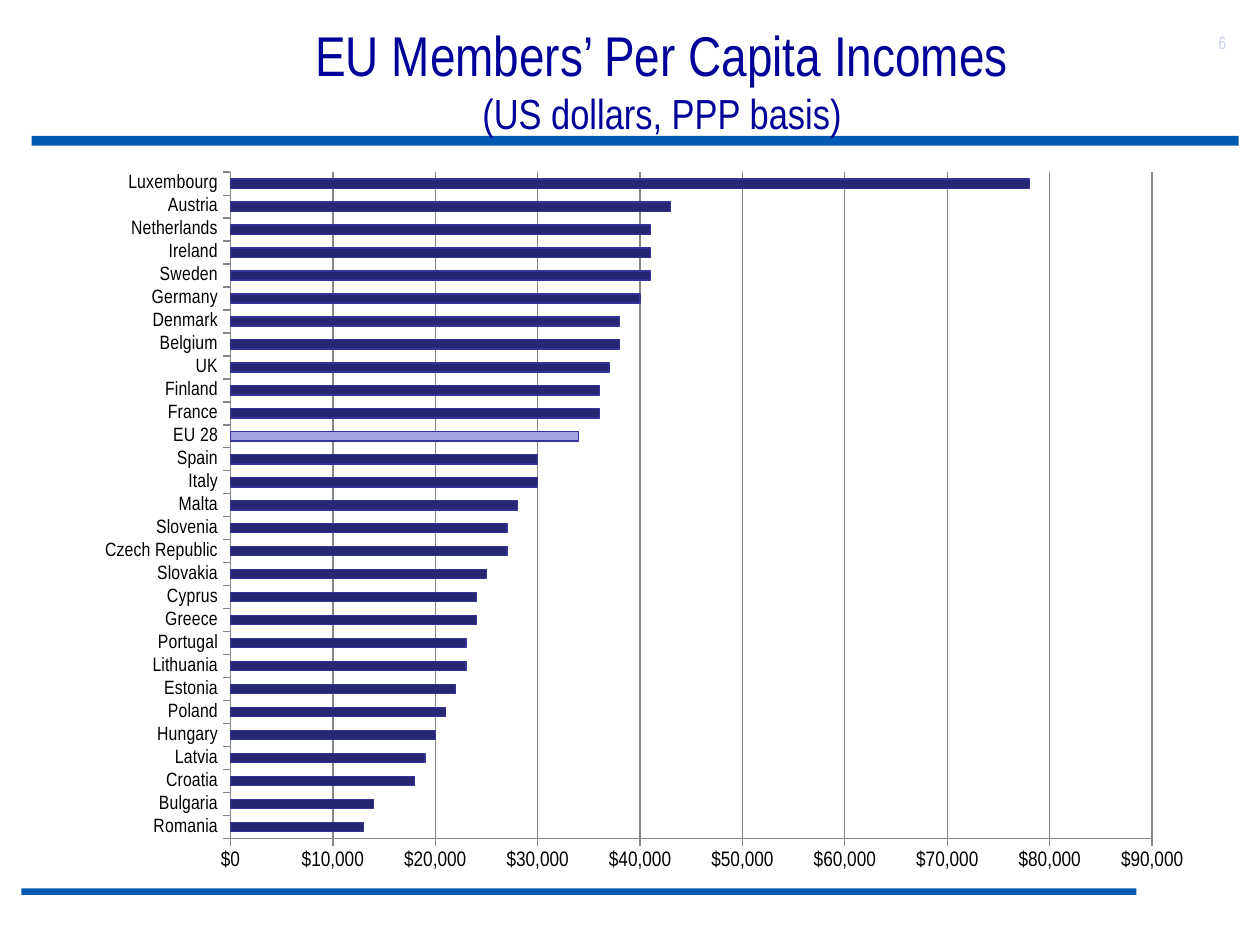
from dataclasses import dataclass

from lxml import etree
from pptx import Presentation
from pptx.chart.data import CategoryChartData as Data
from pptx.dml.color import RGBColor as Rgb
from pptx.enum.chart import XL_CHART_TYPE as Kind, XL_TICK_MARK as Tick
from pptx.enum.shapes import MSO_SHAPE as Form
from pptx.enum.text import MSO_ANCHOR as Anchor, MSO_AUTO_SIZE as Fit, PP_ALIGN as Align
from pptx.oxml.ns import qn
from pptx.util import Cm, Pt


@dataclass(frozen=True)
class Theme:
    face: str = "Arial Narrow"
    rule: str = "005AB4"
    title: str = "000099"
    page: str = "C6D0EE"
    text: str = "000000"
    bar: str = "262673"
    mean: str = "A3A3E0"
    edge: str = "333399"
    grid: str = "868686"
    head_pt: int = 32
    sub_pt: int = 24
    page_pt: int = 10
    name_pt: int = 11
    cash_pt: int = 12


@dataclass(frozen=True)
class Box:
    left: float
    top: float
    width: float
    height: float

    def cm(self) -> tuple:
        return Cm(self.left), Cm(self.top), Cm(self.width), Cm(self.height)


THEME = Theme()
RULES = [Box(0.64, 2.74, 24.33, 0.2), Box(0.43, 17.91, 22.48, 0.13)]
HEAD = Box(1.7, 0.43, 23.29, 2.34)
CHART = Box(1.7, 3.18, 22.66, 14.6)
PAGE = Box(24.31, 0.53, 1.09, 1.27)
PLOT = {"x": 0.13, "y": 0.02, "w": 0.82, "h": 0.92}  # shares of the chart frame
MEAN = "EU 28"
INCOMES = {  # thousands of dollars
    "Romania": 13, "Bulgaria": 14, "Croatia": 18, "Latvia": 19, "Hungary": 20,
    "Poland": 21, "Estonia": 22, "Lithuania": 23, "Portugal": 23, "Greece": 24,
    "Cyprus": 24, "Slovakia": 25, "Czech Republic": 27, "Slovenia": 27,
    "Malta": 28, "Italy": 30, "Spain": 30, MEAN: 34, "France": 36,
    "Finland": 36, "UK": 37, "Belgium": 38, "Denmark": 38, "Germany": 40,
    "Sweden": 41, "Ireland": 41, "Netherlands": 41, "Austria": 43,
    "Luxembourg": 78,
}


def style(font, size: int, color: str) -> None:
    font.name = THEME.face
    font.size = Pt(size)
    font.color.rgb = Rgb.from_string(color)


def draw_line(line, color: str) -> None:
    line.color.rgb = Rgb.from_string(color)
    line.width = Pt(0.75)


def paint(fill, color: str) -> None:
    fill.solid()
    fill.fore_color.rgb = Rgb.from_string(color)


def add_rule(slide, box: Box) -> None:
    rule = slide.shapes.add_shape(Form.RECTANGLE, *box.cm())
    rule.shadow.inherit = False
    paint(rule.fill, THEME.rule)
    rule.line.fill.background()


def set_title(slide) -> None:
    title = slide.shapes.title
    title.left, title.top, title.width, title.height = HEAD.cm()
    frame = title.text_frame
    frame.text = "EU Members’ Per Capita Incomes\v(US dollars, PPP basis)"
    frame.auto_size = Fit.NONE
    frame.vertical_anchor = Anchor.MIDDLE
    para = frame.paragraphs[0]
    para.alignment = Align.CENTER
    for run, size in zip(para.runs, (THEME.head_pt, THEME.sub_pt)):
        style(run.font, size, THEME.title)
    title.element.getparent().append(title.element)  # in front of the rules


def add_page(slide) -> None:
    frame = slide.shapes.add_textbox(*PAGE.cm()).text_frame
    frame.word_wrap = True
    frame.text = "6"
    style(frame.paragraphs[0].runs[0].font, THEME.page_pt, THEME.page)


def place_plot(chart) -> None:
    """Fix the inner plot area at the PLOT shares of the frame."""
    area = chart.element.find(".//" + qn("c:plotArea"))
    for old in area.findall(qn("c:layout")):
        area.remove(old)
    layout = etree.Element(qn("c:layout"))
    manual = etree.SubElement(layout, qn("c:manualLayout"))
    modes = {"layoutTarget": "inner", "xMode": "edge", "yMode": "edge"}
    for tag, val in {**modes, **PLOT}.items():
        etree.SubElement(manual, qn("c:" + tag)).set("val", str(val))
    area.insert(0, layout)


def add_chart(slide) -> None:
    data = Data()
    data.categories = list(INCOMES)
    data.add_series("Series 1", [val * 1000 for val in INCOMES.values()])
    chart = slide.shapes.add_chart(Kind.BAR_CLUSTERED, *CHART.cm(), data).chart
    chart.has_legend = False
    chart.has_title = False
    style(chart.font, THEME.cash_pt, THEME.text)
    place_plot(chart)

    names, cash = chart.category_axis, chart.value_axis
    for axis, size in ((names, THEME.name_pt), (cash, THEME.cash_pt)):
        style(axis.tick_labels.font, size, THEME.text)
        axis.major_tick_mark = Tick.OUTSIDE
        axis.minor_tick_mark = Tick.NONE
        draw_line(axis.format.line, THEME.grid)
    names.has_major_gridlines = False
    cash.has_major_gridlines = True
    draw_line(cash.major_gridlines.format.line, THEME.grid)
    cash.minimum_scale, cash.maximum_scale, cash.major_unit = 0, 90000, 10000
    cash.tick_labels.number_format = '"$"#,##0'
    cash.tick_labels.number_format_is_linked = False

    plot = chart.plots[0]
    plot.gap_width = 150
    plot.vary_by_categories = False
    bars = plot.series[0]
    bars.invert_if_negative = False
    mean = bars.points[list(INCOMES).index(MEAN)]
    for part, color in ((bars, THEME.bar), (mean, THEME.mean)):
        paint(part.format.fill, color)
        draw_line(part.format.line, THEME.edge)


def main() -> None:
    deck = Presentation()
    deck.slide_width, deck.slide_height = Cm(25.4), Cm(19.05)
    slide = deck.slides.add_slide(deck.slide_layouts[5])
    for box in RULES:
        add_rule(slide, box)
    set_title(slide)
    add_chart(slide)
    add_page(slide)
    deck.save("out.pptx")


if __name__ == "__main__":
    main()
